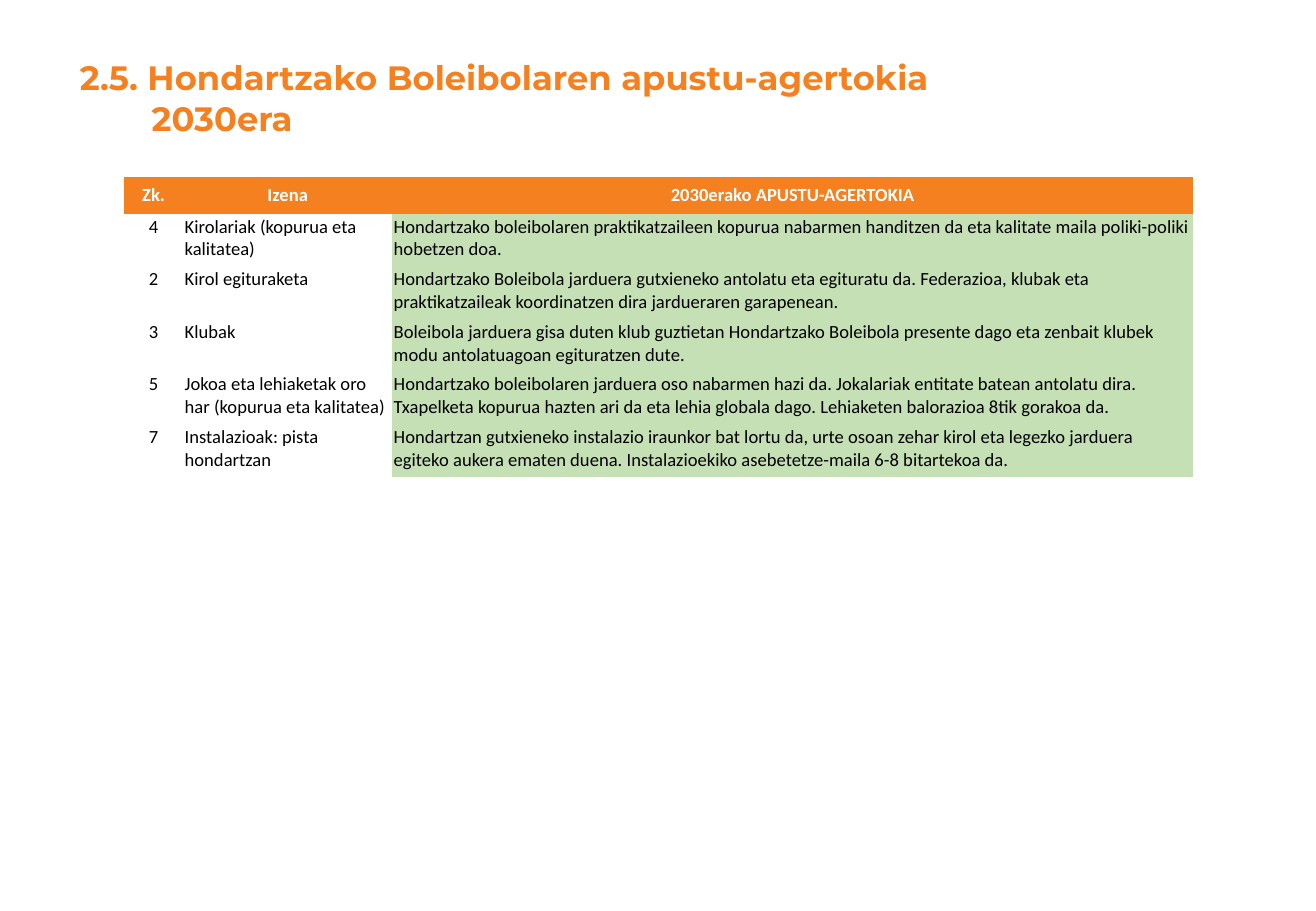
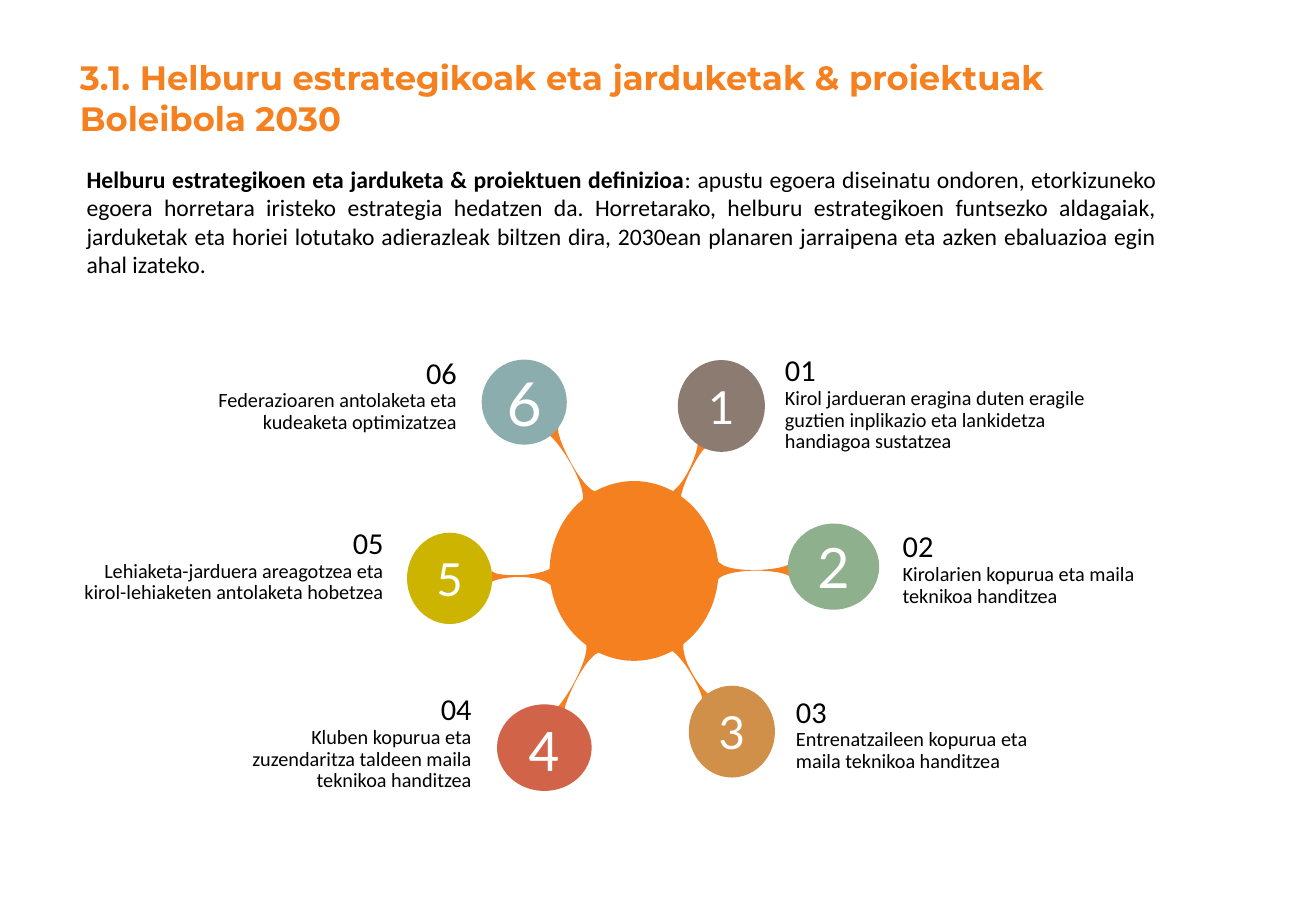
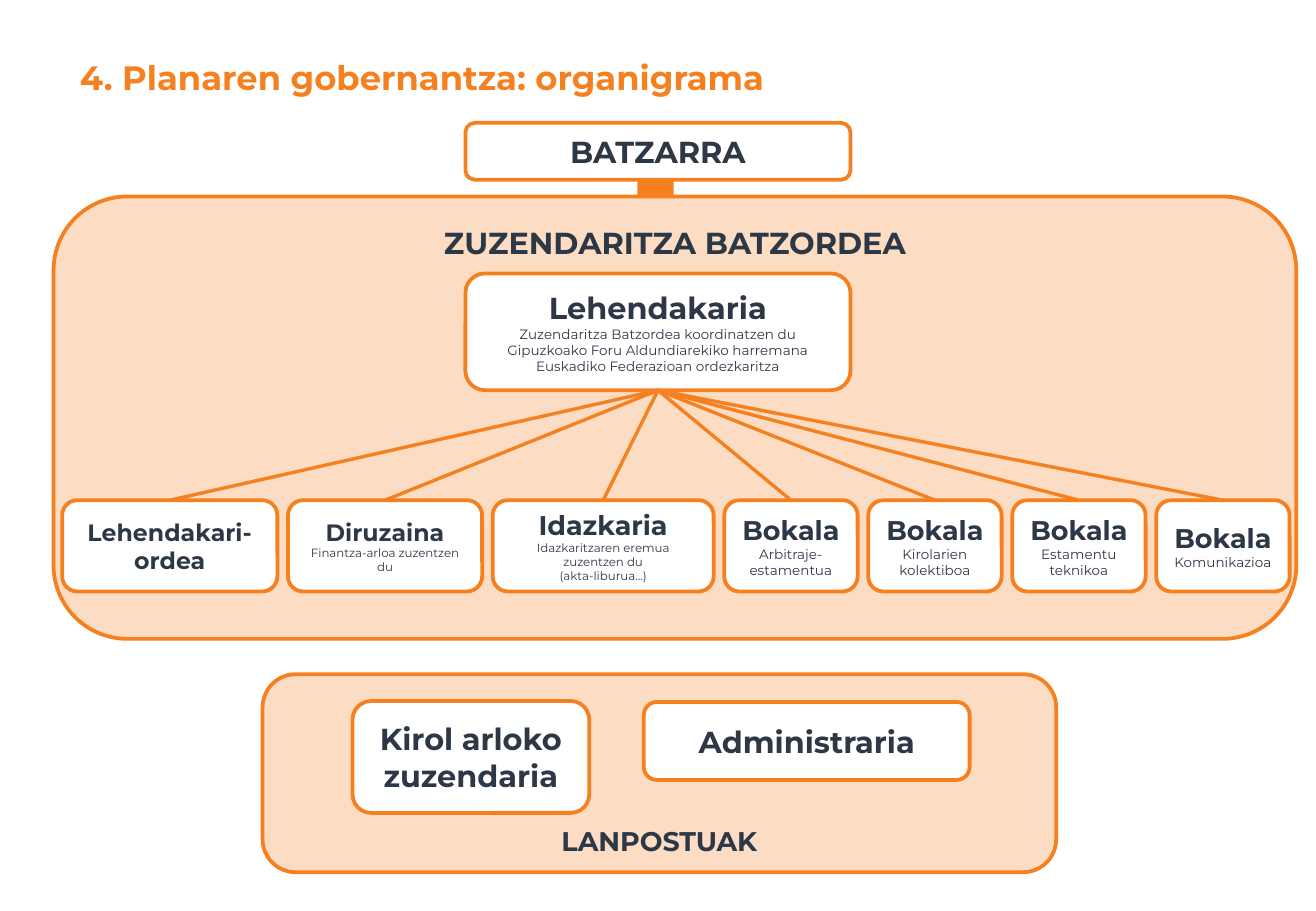
from lxml import etree
from pptx import Presentation
from pptx.dml.color import RGBColor
from pptx.enum.shapes import MSO_CONNECTOR, MSO_SHAPE
from pptx.enum.text import MSO_ANCHOR, PP_ALIGN
from pptx.oxml.ns import qn
from pptx.util import Cm, Pt

ORANGE = RGBColor(0xF5, 0x80, 0x1F)
PEACH = RGBColor(0xFC, 0xDD, 0xC4)
GREEN = RGBColor(0xC5, 0xE0, 0xB4)
NAVY = RGBColor(0x2D, 0x38, 0x47)
BLACK = RGBColor(0, 0, 0)
WHITE = RGBColor(0xFF, 0xFF, 0xFF)
TAUPE = RGBColor(0x8C, 0x7B, 0x70)
SAGE = RGBColor(0x8F, 0xB0, 0x8C)
OCHRE = RGBColor(0xD1, 0x90, 0x49)
BRICK = RGBColor(0xD1, 0x63, 0x49)
MUSTARD = RGBColor(0xCC, 0xB4, 0x00)
TEAL = RGBColor(0x8C, 0xAD, 0xAE)

HEADING_FONT = "Montserrat"
BODY_FONT = "Calibri"
DIGIT_FONT = "Lato"

LEFT, CENTER, RIGHT, JUSTIFY = (
    PP_ALIGN.LEFT, PP_ALIGN.CENTER, PP_ALIGN.RIGHT, PP_ALIGN.JUSTIFY)
TOP, MIDDLE, BOTTOM = MSO_ANCHOR.TOP, MSO_ANCHOR.MIDDLE, MSO_ANCHOR.BOTTOM
ROUNDED, OVAL, DOWN_ARROW = (
    MSO_SHAPE.ROUNDED_RECTANGLE, MSO_SHAPE.OVAL, MSO_SHAPE.DOWN_ARROW)
STRAIGHT = MSO_CONNECTOR.STRAIGHT
SITE_TOP, SITE_BOTTOM = 0, 2
PLAIN_TABLE_STYLE = "{2D5ABB26-0587-4C30-8999-92F81FD0307C}"
CURVE_STEPS = 12

SCENARIO_COLUMNS = (1.24, 4.37, 16.74)
SCENARIO_HEADER = ("Zk.", "Izena", "2030erako APUSTU-AGERTOKIA")
SCENARIO = [
    ("4", "Kirolariak (kopurua eta kalitatea)",
     "Hondartzako boleibolaren praktikatzaileen kopurua nabarmen handitzen da "
     "eta kalitate maila poliki-poliki hobetzen doa."),
    ("2", "Kirol egituraketa",
     "Hondartzako Boleibola jarduera gutxieneko antolatu eta egituratu da. "
     "Federazioa, klubak eta praktikatzaileak koordinatzen dira jardueraren "
     "garapenean."),
    ("3", "Klubak",
     "Boleibola jarduera gisa duten klub guztietan Hondartzako Boleibola "
     "presente dago eta zenbait klubek modu antolatuagoan egituratzen dute."),
    ("5", "Jokoa eta lehiaketak oro har (kopurua eta kalitatea)",
     "Hondartzako boleibolaren jarduera oso nabarmen hazi da. Jokalariak "
     "entitate batean antolatu dira. Txapelketa kopurua hazten ari da eta lehia "
     "globala dago. Lehiaketen balorazioa 8tik gorakoa da."),
    ("7", "Instalazioak: pista hondartzan",
     "Hondartzan gutxieneko instalazio iraunkor bat lortu da, urte osoan zehar "
     "kirol eta legezko jarduera egiteko aukera ematen duena. Instalazioekiko "
     "asebetetze-maila 6-8 bitartekoa da."),
]

DEFINITION_TERM = "Helburu estrategikoen eta jarduketa & proiektuen definizioa"
DEFINITION = (
    ": apustu egoera diseinatu ondoren, etorkizuneko egoera horretara iristeko "
    "estrategia hedatzen da. Horretarako, helburu estrategikoen funtsezko "
    "aldagaiak, jarduketak eta horiei lotutako adierazleak biltzen dira, 2030ean "
    "planaren jarraipena eta azken ebaluazioa egin ahal izateko.")

HUB = (11.49, 10.06, 3.53, 3.76)
SPOKES = [
    [(13.74, 10.34), (14.22, 10.54), (14.66, 9.32), (14.58, 9.22),
     (14.78, 9.35), (14.68, 9.32), (14.07, 10.39), (14.25, 10.67)],
    [(14.99, 11.68), (15.04, 12.04), (16.48, 11.94), (16.54, 11.76),
     (16.54, 12.09), (16.48, 11.89), (15.04, 11.84), (14.96, 12.19)],
    [(14.4, 13.23), (14, 13.59), (14.76, 14.58), (14.88, 14.55),
     (14.68, 14.68), (14.76, 14.58), (14.2, 13.51), (13.87, 13.54)],
    [(12.6, 13.64), (12.29, 13.54), (11.66, 14.91), (11.79, 15.06),
     (11.51, 14.88), (11.68, 14.94), (12.45, 13.64), (12.22, 13.39)],
    [(11.58, 12.32), (11.38, 11.94), (10.31, 12.07), (10.26, 12.19),
     (10.29, 11.94), (10.31, 12.07), (11.46, 12.09), (11.61, 11.79)],
    [(12.14, 10.54), (12.4, 10.31), (11.58, 9.02), (11.4, 9.07),
     (11.68, 8.92), (11.56, 9.04), (12.22, 10.41), (12.55, 10.29)],
]
GOALS = [
    ((14.17, 7.53, 1.82, 1.92), TAUPE, DIGIT_FONT, 27,
     (15.9, 7.34, 7.54, 2.29), LEFT,
     "Kirol jardueran eragina duten eragile guztien inplikazio eta lankidetza "
     "handiagoa sustatzea"),
    ((16.47, 10.95, 1.91, 1.8), SAGE, DIGIT_FONT, 33,
     (18.36, 11.02, 6.43, 1.83), LEFT,
     "Kirolarien kopurua eta maila teknikoa handitzea"),
    ((14.4, 14.34, 1.8, 1.92), OCHRE, DIGIT_FONT, 27,
     (16.13, 14.48, 6.43, 1.83), LEFT,
     "Entrenatzaileen kopurua eta maila teknikoa handitzea"),
    ((10.39, 14.73, 1.98, 1.81), BRICK, BODY_FONT, 36,
     (3.94, 14.43, 6.43, 2.29), RIGHT,
     "Kluben kopurua eta zuzendaritza taldeen maila teknikoa handitzea"),
    ((8.51, 11.14, 1.78, 1.91), MUSTARD, DIGIT_FONT, 27,
     (1.19, 10.95, 7.34, 1.83), RIGHT,
     "Lehiaketa-jarduera areagotzea eta kirol-lehiaketen antolaketa hobetzea"),
    ((10.07, 7.52, 1.78, 1.78), TEAL, DIGIT_FONT, 36,
     (3.63, 7.39, 6.43, 1.83), RIGHT,
     "Federazioaren antolaketa eta kudeaketa optimizatzea"),
]

MEMBER_LEFT, MEMBER_TOP, MEMBER_HEIGHT, MEMBER_GAP = 1.3, 10.46, 1.91, 0.22
MEMBERS = [
    (4.5, [("Lehendakari-ordea", 14, True)]),
    (4.06, [("Diruzaina", 14, True), ("Finantza-arloa zuzentzen du", 7, False)]),
    (4.62, [("Idazkaria", 16, True),
            ("Idazkaritzaren eremua zuzentzen du", 7, False),
            ("(akta-liburua…)", 7, False)]),
] + [
    (2.79, [("Bokala", 16, True), (area, 8, False)])
    for area in ("Arbitraje-estamentua", "Kirolarien kolektiboa",
                 "Estamentu teknikoa", "Komunikazioa")
]


def box(place):
    return [Cm(length) for length in place]


def style_run(run, size, bold, font, color):
    run.font.size = Pt(size)
    run.font.bold = bold
    run.font.name = font
    run.font.color.rgb = color


def write(frame, lines, font, color, align=LEFT, spacing=None):
    frame.word_wrap = True
    frame.text = "\n".join(text for text, _, _ in lines)
    for paragraph, (_, size, bold) in zip(frame.paragraphs, lines):
        paragraph.alignment = align
        paragraph.line_spacing = spacing
        style_run(paragraph.runs[0], size, bold, font, color)


def set_margins(holder, left, top, right, bottom):
    holder.margin_left, holder.margin_top = Cm(left), Cm(top)
    holder.margin_right, holder.margin_bottom = Cm(right), Cm(bottom)


def add_title(slide, lines, width=23.8, hanging=0):
    frame = slide.shapes.add_textbox(*box((1.42, 1.07, width, 2.44))).text_frame
    write(frame, [(line, 20, True) for line in lines], HEADING_FONT, ORANGE)
    if hanging:
        properties = frame.paragraphs[0]._p.get_or_add_pPr()
        properties.set("marL", str(Cm(hanging)))
        properties.set("indent", str(-Cm(hanging)))


def paint(shape, fill, line_width=0):
    shape.shadow.inherit = False
    shape.fill.solid()
    shape.fill.fore_color.rgb = fill
    if line_width:
        shape.line.color.rgb = ORANGE
        shape.line.width = Pt(line_width)
    else:
        shape.line.fill.background()


def add_panel(slide, place, fill, lines, anchor=MIDDLE):
    panel = slide.shapes.add_shape(ROUNDED, *box(place))
    paint(panel, fill, 2.25)
    panel.text_frame.vertical_anchor = anchor
    write(panel.text_frame, lines, HEADING_FONT, NAVY, CENTER)
    return panel


def add_branch(slide, parent, child):
    branch = slide.shapes.add_connector(STRAIGHT, 0, 0, 0, 0)
    branch.begin_connect(parent, SITE_BOTTOM)
    branch.end_connect(child, SITE_TOP)
    branch.line.color.rgb = ORANGE
    branch.line.width = Pt(2)
    etree.SubElement(branch._element.spPr, qn("a:effectLst"))


def curve(controls):
    points = []
    for step in range(CURVE_STEPS + 1):
        t = step / CURVE_STEPS
        weights = ((1 - t) ** 3, 3 * t * (1 - t) ** 2, 3 * t * t * (1 - t), t ** 3)
        points.append(tuple(
            Cm(sum(w * c[axis] for w, c in zip(weights, controls)))
            for axis in (0, 1)))
    return points


def add_spoke(slide, controls):
    outline = curve(controls[:4]) + curve(controls[4:])
    builder = slide.shapes.build_freeform(*outline[0])
    builder.add_line_segments(outline[1:], close=True)
    paint(builder.convert_to_shape(), ORANGE)


def add_disc(slide, place, color):
    disc = slide.shapes.add_shape(OVAL, *box(place))
    paint(disc, color)
    return disc


def add_goal(slide, number, place, color, font, size, label_place, align, text):
    frame = add_disc(slide, place, color).text_frame
    set_margins(frame, 0, 0, 0, 0)
    frame.vertical_anchor = MIDDLE
    write(frame, [(str(number), size, False)], font, WHITE, CENTER)
    label = slide.shapes.add_textbox(*box(label_place)).text_frame
    set_margins(label, 0.51, 0.1, 0.51, 0.13)
    write(label, [(f"{number:02d}", 18, False), (text, 12, False)],
          BODY_FONT, BLACK, align, 0.89)


def fill_cell(cell, text, color, bold, align, anchor, fill):
    write(cell.text_frame, [(text, 11, bold)], BODY_FONT, color, align)
    cell.vertical_anchor = anchor
    if fill is None:
        cell.fill.background()
    else:
        cell.fill.solid()
        cell.fill.fore_color.rgb = fill


def add_scenario_table(slide):
    heights = [0.76] + [1.1] * len(SCENARIO)
    place = (2.59, 3.71, sum(SCENARIO_COLUMNS), sum(heights))
    table = slide.shapes.add_table(
        len(heights), len(SCENARIO_COLUMNS), *box(place)).table
    table._tbl.tblPr.find(qn("a:tableStyleId")).text = PLAIN_TABLE_STYLE
    table.first_row = table.horz_banding = False
    for column, width in zip(table.columns, SCENARIO_COLUMNS):
        column.width = Cm(width)
    for row, height in zip(table.rows, heights):
        row.height = Cm(height)
    for cell, text in zip(table.rows[0].cells, SCENARIO_HEADER):
        set_margins(cell, 0, 0, 0, 0)
        fill_cell(cell, text, WHITE, True, CENTER, MIDDLE, ORANGE)
    columns = ((CENTER, None), (LEFT, None), (LEFT, GREEN))
    for row, texts in zip(list(table.rows)[1:], SCENARIO):
        for cell, text, (align, fill) in zip(row.cells, texts, columns):
            set_margins(cell, 0.03, 0.03, 0.03, 0)
            fill_cell(cell, text, BLACK, False, align, TOP, fill)


def build_scenario(slide):
    add_title(slide, ["2.5. Hondartzako Boleibolaren apustu-agertokia 2030era"],
              width=20.35, hanging=1.5)
    add_scenario_table(slide)


def build_goals(slide):
    add_title(slide, ["3.1. Helburu estrategikoak eta jarduketak & proiektuak",
                      "Boleibola 2030"])
    definition = slide.shapes.add_textbox(*box((1.63, 3.35, 22.73, 2.59))).text_frame
    set_margins(definition, 0.18, 0.1, 0.18, 0.1)
    write(definition, [(DEFINITION_TERM, 14, True)], BODY_FONT, BLACK, JUSTIFY)
    explanation = definition.paragraphs[0].add_run()
    explanation.text = DEFINITION
    style_run(explanation, 14, False, BODY_FONT, BLACK)
    for controls in SPOKES:
        add_spoke(slide, controls)
    add_disc(slide, HUB, ORANGE)
    for number, goal in enumerate(GOALS, 1):
        add_goal(slide, number, *goal)


def build_organigram(slide):
    add_panel(slide, (5.49, 14.1, 16.59, 4.14), PEACH,
              [("LANPOSTUAK", 16, True)], BOTTOM)
    add_title(slide, ["4. Planaren gobernantza: organigrama"])
    arrow = slide.shapes.add_shape(DOWN_ARROW, *box((12.98, 3.71, 1.45, 5.69)))
    paint(arrow, ORANGE, 1)
    add_panel(slide, (9.73, 2.57, 8.05, 1.19), WHITE, [("BATZARRA", 18, True)])
    add_panel(slide, (1.12, 4.11, 25.98, 9.25), PEACH,
              [("ZUZENDARITZA BATZORDEA", 18, True)], TOP)
    president = add_panel(slide, (9.73, 5.72, 8.05, 2.44), WHITE, [
        ("Lehendakaria", 18, True),
        ("Zuzendaritza Batzordea koordinatzen du", 8, False),
        ("Gipuzkoako Foru Aldundiarekiko harremana", 8, False),
        ("Euskadiko Federazioan ordezkaritza", 8, False)])
    left = MEMBER_LEFT
    for width, lines in MEMBERS:
        member = add_panel(
            slide, (left, MEMBER_TOP, width, MEMBER_HEIGHT), WHITE, lines)
        add_branch(slide, president, member)
        left += width + MEMBER_GAP
    add_panel(slide, (7.37, 14.66, 4.95, 2.34), WHITE,
              [("Kirol arloko zuzendaria", 18, True)])
    add_panel(slide, (13.46, 14.68, 6.81, 1.63), WHITE,
              [("Administraria", 18, True)])


def main():
    deck = Presentation()
    deck.slide_width, deck.slide_height = Cm(27.51), Cm(19.05)
    blank = deck.slide_layouts[6]
    for build in (build_scenario, build_goals, build_organigram):
        build(deck.slides.add_slide(blank))
    deck.save("out.pptx")


if __name__ == "__main__":
    main()
